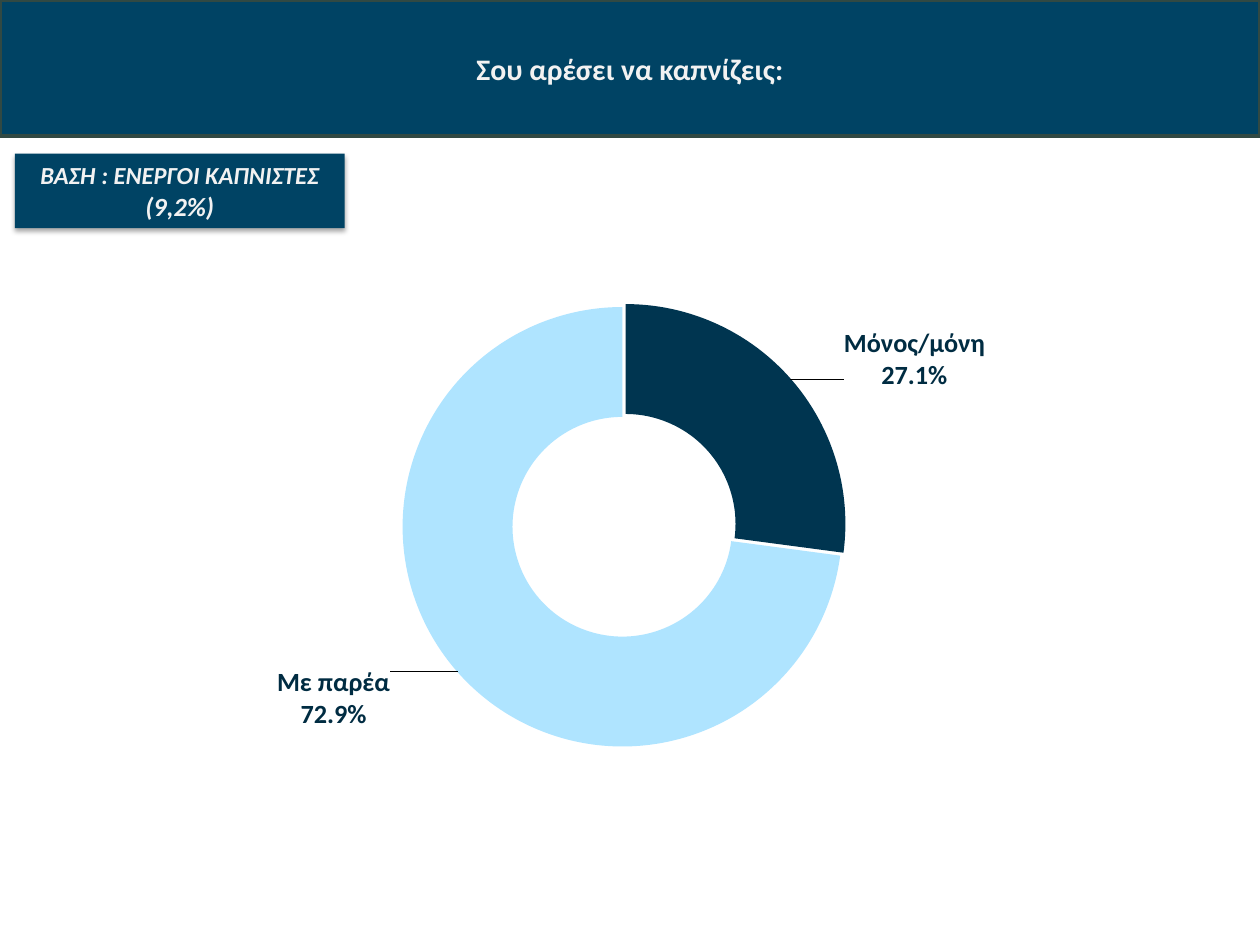
from copy import deepcopy
from dataclasses import dataclass

from lxml import etree
from pptx import Presentation
from pptx.chart.data import CategoryChartData
from pptx.dml.color import RGBColor
from pptx.enum.chart import XL_CHART_TYPE
from pptx.enum.shapes import MSO_SHAPE
from pptx.enum.text import MSO_ANCHOR, MSO_AUTO_SIZE, PP_ALIGN
from pptx.oxml import parse_xml
from pptx.oxml.ns import nsdecls, qn
from pptx.util import Cm, Pt

DOUGHNUT = XL_CHART_TYPE.DOUGHNUT
RECTANGLE = MSO_SHAPE.RECTANGLE
MIDDLE = MSO_ANCHOR.MIDDLE
GROW = MSO_AUTO_SIZE.SHAPE_TO_FIT_TEXT
CENTER = PP_ALIGN.CENTER


@dataclass(frozen=True)
class Theme:
    font: str = "Calibri"
    band: RGBColor = RGBColor(0x00, 0x43, 0x64)
    band_line: RGBColor = RGBColor(0x31, 0x49, 0x43)
    light_text: RGBColor = RGBColor(0xF2, 0xF2, 0xF2)
    dark_text: RGBColor = RGBColor(0x00, 0x2C, 0x42)
    slices: tuple = (RGBColor(0x00, 0x35, 0x50), RGBColor(0xAF, 0xE4, 0xFF))
    title_size: int = 17
    note_size: int = 14
    figure_size: int = 15
    label_size: int = 15


def layout_xml(**values):
    items = "".join(f'<c:{k} val="{v}"/>' for k, v in values.items())
    return parse_xml(f'<c:layout {nsdecls("c")}><c:manualLayout>{items}'
                     '</c:manualLayout></c:layout>')


class SlideBuilder:
    def __init__(self, prs, theme):
        self.theme = theme
        self.slide = prs.slides.add_slide(prs.slide_layouts[5])

    def style(self, font, size, color, italic=False):
        font.name = self.theme.font
        font.size = Pt(size)
        font.bold = True
        font.italic = italic
        font.color.rgb = color

    def rectangle(self, box):
        sp = self.slide.shapes.add_shape(RECTANGLE, *map(Cm, box))
        sp.shadow.inherit = False
        sp.fill.solid()
        sp.fill.fore_color.rgb = self.theme.band
        sp.line.fill.background()
        return sp

    def band(self, box):
        sp = self.rectangle(box)
        sp.line.color.rgb = self.theme.band_line
        sp.line.width = Pt(2)
        self.slide.shapes.title.element.addprevious(sp.element)

    def title(self, text, box):
        sp = self.slide.shapes.title
        sp.left, sp.top, sp.width, sp.height = map(Cm, box)
        tf = sp.text_frame
        tf.text = text
        tf.vertical_anchor = MIDDLE
        p = tf.paragraphs[0]
        p.alignment = CENTER
        self.style(p.runs[0].font, self.theme.title_size, self.theme.light_text)

    def note(self, runs, box):
        sp = self.rectangle(box)
        effects = sp.element.spPr.find(qn("a:effectLst"))
        effects.append(parse_xml(
            f'<a:outerShdw {nsdecls("a")} blurRad="{Pt(3.1)}" dist="{Pt(1.8)}" '
            'dir="5400000" rotWithShape="0"><a:srgbClr val="000000">'
            '<a:alpha val="35000"/></a:srgbClr></a:outerShdw>'))
        tf = sp.text_frame
        tf.word_wrap = True
        tf.auto_size = GROW
        tf.vertical_anchor = MIDDLE
        p = tf.paragraphs[0]
        p.alignment = CENTER
        for text, size in runs:
            r = p.add_run()
            r.text = text
            self.style(r.font, size, self.theme.light_text, italic=True)

    def doughnut(self, values, plot_area, label_offsets, box):
        data = CategoryChartData()
        data.categories = list(values)
        data.add_series("Series 1", list(values.values()))
        frame = self.slide.shapes.add_chart(DOUGHNUT, *map(Cm, box), data)
        chart = frame.chart
        chart.has_legend = False
        chart.has_title = False
        chart.font.name = self.theme.font
        chart.font.size = Pt(18)
        plot = chart.plots[0]
        plot.vary_by_categories = True
        plot_xml = chart.element.find(f'.//{qn("c:plotArea")}')
        for old in plot_xml.findall(qn("c:layout")):
            plot_xml.remove(old)
        x, y, w, h = plot_area
        plot_xml.insert(0, layout_xml(layoutTarget="inner", xMode="edge",
                                      yMode="edge", x=x, y=y, w=w, h=h))
        plot_xml.find(f'.//{qn("c:holeSize")}').set("val", "34")
        series = plot.series[0]
        for i, color in enumerate(self.theme.slices):
            fill = series.points[i].format.fill
            fill.solid()
            fill.fore_color.rgb = color
        for point in plot_xml.iter(qn("c:dPt")):
            explosion = etree.Element(qn("c:explosion"), val="2")
            point.find(qn("c:spPr")).addprevious(explosion)
        self.labels(series, label_offsets)

    def labels(self, series, offsets):
        labels = series.data_labels
        labels.show_category_name = True
        labels.show_percentage = True
        labels.show_value = False
        labels.number_format = "0.0%"
        labels.number_format_is_linked = False
        self.style(labels.font, self.theme.label_size, self.theme.dark_text)
        group = labels._element
        separator = etree.Element(qn("c:separator"))
        separator.text = "\n"
        leader = group.find(qn("c:showLeaderLines"))
        if leader is None:
            group.append(separator)
        else:
            leader.addprevious(separator)
        shared = [el for el in group if el.tag != qn("c:showLeaderLines")]
        for i, (x, y) in enumerate(offsets):
            label = etree.Element(qn("c:dLbl"))
            etree.SubElement(label, qn("c:idx"), val=str(i))
            label.append(layout_xml(x=x, y=y))
            label.extend(deepcopy(shared))
            group.insert(i, label)


def main():
    theme = Theme()
    prs = Presentation()
    prs.slide_width, prs.slide_height = Cm(25.4), Cm(19.05)
    s = SlideBuilder(prs, theme)
    s.band((0, 0, 25.4, 2.74))
    s.title("Σου αρέσει να καπνίζεις:", (0, 0, 25.4, 2.77))
    s.doughnut({"Μόνος/μόνη": 27.1, "Με παρέα": 72.9},
               plot_area=(0.32, 0.2, 0.32, 0.63),
               label_offsets=((0.12, -0.08), (-0.12, 0.09)),
               box=(-0.71, 3.33, 27.69, 14.1))
    s.note((("ΒΑΣΗ : ΕΝΕΡΓΟΙ ΚΑΠΝΙΣΤΕΣ ", theme.note_size),
            ("(9,2%)", theme.figure_size)), (0.3, 3.1, 6.65, 1.5))
    prs.save("out.pptx")


if __name__ == "__main__":
    main()
